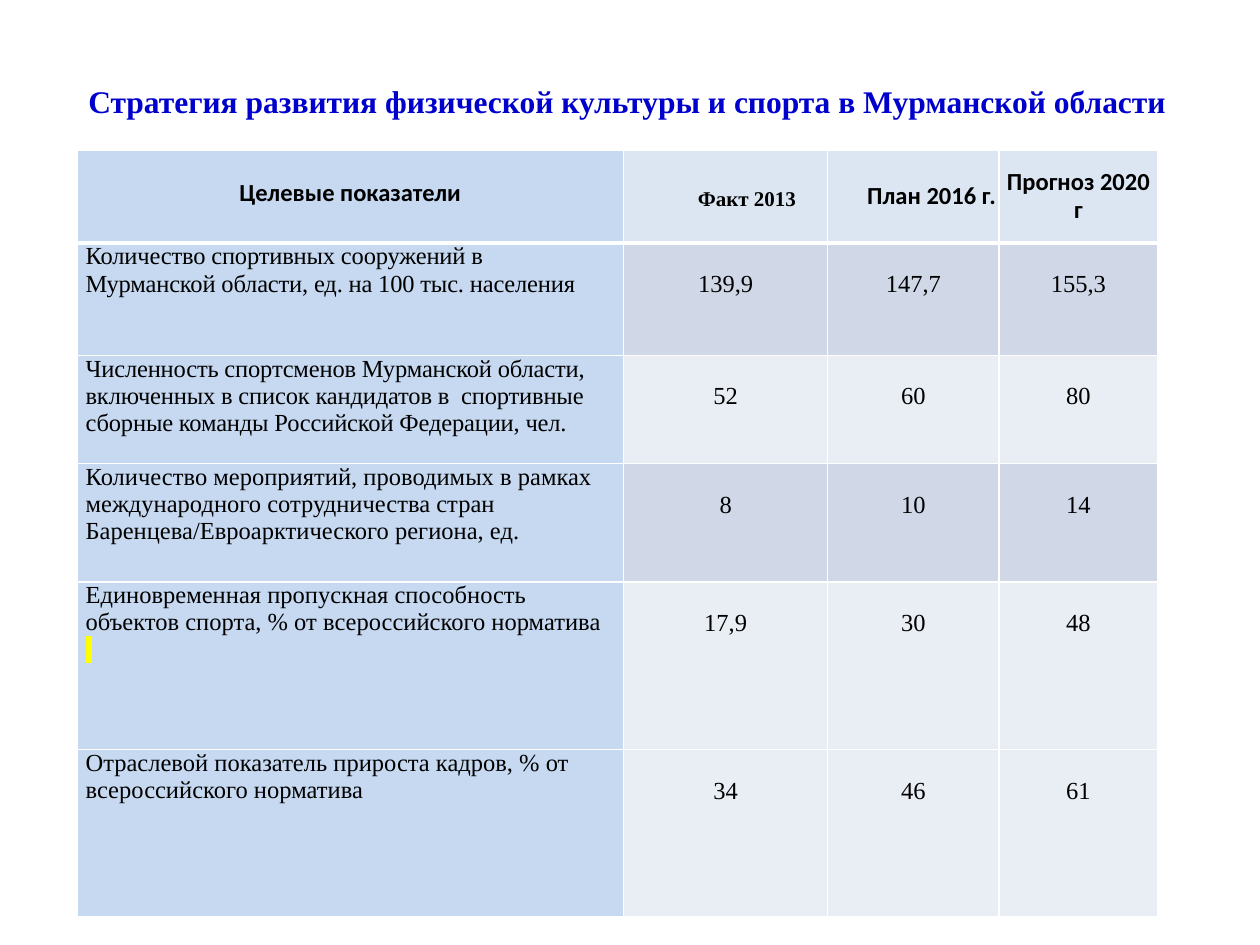
from lxml import etree
from pptx import Presentation, util as u
from pptx.dml.color import RGBColor
from pptx.enum import text as t
from pptx.oxml.ns import qn

HUES = {"title": "0000CC", "ink": "000000", "line": "FFFFFF", "name": "C6D9F1",
        "head": "DCE6F2", "dark": "D0D8E8", "light": "E9EDF4", "mark": "FFFF00"}
SERIF, SANS = "Times New Roman", "Calibri"
COLS = [4.34, 1.62, 1.36, 1.26]
ROWS = [0.74, 0.89, 0.86, 0.94, 1.33, 1.33]
HEADS = [("Целевые показатели", 14, SANS, 13, 0),
         ("Факт 2013 ", 12, SERIF, 16.2, 0.38),
         ("План 2016 г.", 14, SANS, 16, 0.29),
         ("Прогноз 2020 г", 14, SANS, 16, 0)]
DATA = [
    ("Количество спортивных сооружений в Мурманской области, ед. на 100 тыс. населения",
     "139,9", "147,7", "155,3"),
    ("Численность спортсменов Мурманской области,  включенных в список кандидатов в  "
     "спортивные сборные команды Российской Федерации, чел.", "52", "60", "80"),
    ("Количество мероприятий, проводимых в рамках международного сотрудничества стран "
     "Баренцева/Евроарктического региона, ед.", "8", "10", "14"),
    ("Единовременная пропускная способность объектов спорта, % от всероссийского норматива",
     "17,9", "30", "48"),
    ("Отраслевой показатель прироста кадров, % от всероссийского норматива",
     "34", "46", "61")]
BANDS = ["dark", "light", "dark", "light", "light"]
TIGHT, MARKED = (1, 2), 4


def style(para, size, face, hue="ink", bold=False, mid=True):
    font = para.font
    font.size, font.name, font.bold = u.Pt(size), face, bold
    font.color.rgb = RGBColor.from_string(HUES[hue])
    para.alignment = t.PP_ALIGN.CENTER if mid else t.PP_ALIGN.LEFT


def tint(node, tag, hue):
    fill = etree.SubElement(node, qn(tag))
    etree.SubElement(fill, qn("a:srgbClr"), val=HUES[hue])


def paint(cell, hue, top, base):
    props = cell._tc.get_or_add_tcPr()
    for side, wide in zip("LRTB", (1, 1, top, base)):
        edge = etree.SubElement(props, qn("a:ln" + side), w=str(u.Pt(wide)))
        tint(edge, "a:solidFill", "line")
    cell.fill.solid()
    cell.fill.fore_color.rgb = RGBColor.from_string(HUES[hue])


def inset(cell, left, right, top=0):
    cell.margin_left, cell.margin_right = u.Inches(left), u.Inches(right)
    cell.margin_top, cell.margin_bottom = u.Inches(top), 0


def title(slide, box):
    frame = slide.shapes.add_textbox(*map(u.Inches, box)).text_frame
    frame.word_wrap = True
    frame.vertical_anchor = t.MSO_ANCHOR.MIDDLE
    frame.text = "Стратегия развития физической культуры и спорта в Мурманской области "
    style(frame.paragraphs[0], 18, SERIF, "title", True)


def header(grid):
    for col, (label, size, face, pitch, dent) in enumerate(HEADS):
        cell = grid.cell(0, col)
        cell.text = label
        cell.vertical_anchor = t.MSO_ANCHOR.MIDDLE
        inset(cell, 0.01 + dent, 0.01)
        para = cell.text_frame.paragraphs[0]
        style(para, size, face, bold=True)
        para.line_spacing = u.Pt(pitch)
        paint(cell, "head" if col else "name", 1, 3)


def body(grid):
    for row, (items, band) in enumerate(zip(DATA, BANDS), 1):
        for col, item in enumerate(items):
            cell = grid.cell(row, col)
            cell.text = item
            inset(cell, 0.07, 0.07, 0.22 if col else 0)
            para = cell.text_frame.paragraphs[0]
            style(para, 14, SERIF, mid=col > 0)
            if row in TIGHT and not col:
                para.runs[0]._r.get_or_add_rPr().set("spc", "-10")
            paint(cell, band if col else "name", 3 if row == 1 else 1, 1)


def mark(cell):
    para = cell.text_frame.add_paragraph()
    style(para, 14, SERIF, mid=False)
    run = para.add_run()
    run.text = " "
    tint(run._r.get_or_add_rPr(), "a:highlight", "mark")


def table(slide, left, top):
    size = map(u.Inches, (left, top, sum(COLS), sum(ROWS)))
    grid = slide.shapes.add_table(len(ROWS), len(COLS), *size).table
    for col, wide in zip(grid.columns, COLS):
        col.width = u.Inches(wide)
    for row, high in zip(grid.rows, ROWS):
        row.height = u.Inches(high)
    header(grid)
    body(grid)
    mark(grid.cell(MARKED, 0))


def main():
    deck = Presentation()
    deck.slide_width, deck.slide_height = u.Inches(10), u.Inches(7.5)
    slide = deck.slides.add_slide(deck.slide_layouts[6])
    title(slide, (0.51, 0.6, 9, 0.4))
    table(slide, 0.61, 1.19)
    deck.save("out.pptx")


if __name__ == "__main__":
    main()
